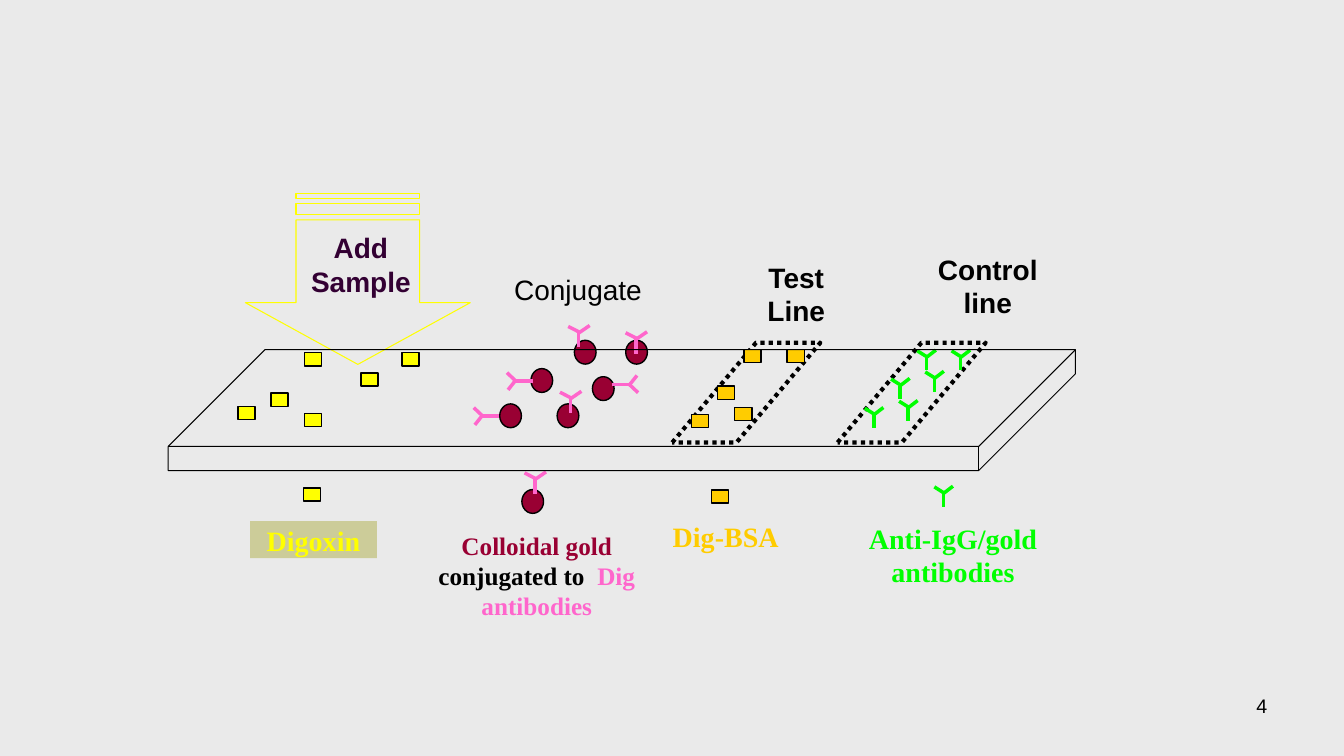
"""Build the slide of a lateral flow test strip for digoxin."""
from lxml import etree
from pptx import Presentation
from pptx.dml.color import RGBColor
from pptx.enum import dml, shapes, text
from pptx.oxml import ns
from pptx.util import Pt

BLACK, YELLOW, ORANGE = "000000", "FFFF00", "FFCC00"
GREEN, PINK, WINE, PLUM = "00FF00", "FF66CC", "990033", "330033"
SANS, SERIF = "Arial", "Times New Roman"
MID = text.PP_ALIGN.CENTER
LEFT = text.PP_ALIGN.LEFT
RIGHT = text.PP_ALIGN.RIGHT
TIGHT, WIDE = (2.9, 1.45), (7.2, 3.6)

LABELS = [
    ((203.8, 163.4, 108, 54.7), [[("Add Sample", PLUM)]], SANS, 20, True, MID, TIGHT, None),
    ((364.3, 193, 135.4, 30), [[("Conjugate", BLACK)]], SANS, 20, False, LEFT, TIGHT, None),
    ((654.5, 178.6, 102.2, 54.7), [[("Control", BLACK)], [("line", BLACK)]],
     SANS, 20, True, MID, TIGHT, None),
    ((532.8, 184.3, 72, 54.7), [[("Test", BLACK)], [("Line", BLACK)]],
     SANS, 20, True, MID, TIGHT, None),
    ((178.6, 372.2, 90.6, 26.6), [[("Digoxin", YELLOW)]],
     SERIF, 20, True, MID, TIGHT, "CCCC99"),
    ((608.4, 370.8, 144.7, 46.8), [[("Anti-IgG/gold", GREEN)], [("antibodies", GREEN)]],
     SERIF, 20, True, MID, TIGHT, None),
    ((453.6, 369.4, 129.6, 26.6), [[("Dig-BSA", ORANGE)]], SERIF, 20, True, MID, TIGHT, None),
    ((298.8, 377.3, 169.2, 67),
     [[("Colloidal gold", WINE)], [("conjugated to", BLACK), ("  Dig antibodies", PINK)]],
     SERIF, 18, True, MID, TIGHT, None),
    ((688.3, 491.8, 223.9, 37.4), [[("4", BLACK)]], SANS, 14, False, RIGHT, WIDE, None),
]

CHIP, BALL = (12.2, 9.4), (15.5, 17)
CHIPS = {
    YELLOW: [(217.4, 252), (287.3, 252), (217.4, 295.2), (216.7, 348.5),
             (169.9, 290.2), (193.7, 280.8), (257.8, 266.4)],
    ORANGE: [(508.3, 349.9), (524.9, 290.9), (562.3, 249.8), (493.9, 295.9),
             (512.6, 275.8), (531.4, 249.8)],
}
BALLS = [(418, 251.6), (454.7, 251.6), (380.5, 358.2), (405.7, 297),
         (387, 271.8), (364.7, 297), (430.9, 277.6)]

SMALL = [(0, 0, 0, 9), (-0.4, 0, 6.8, -5.5), (-6.5, -5, 0.7, -0.5)]
UP = [(0, 0, 0, 10.7), (0.7, 0, -7.5, -4.2), (7.8, -4.9, -0.2, 0.6)]
WEST = [(0, 0, 12.5, 0), (0, 0, -5, 6.3), (-5.8, -6, 1, 0.4)]
EAST = [tuple(-n for n in arm) for arm in WEST]
BODIES = [
    (GREEN, SMALL, [(643, 275.8), (624.2, 296.6), (661.7, 255.6), (686.2, 255.6),
                    (667.4, 270.7), (648.7, 291.6), (673.9, 352.8)]),
    (PINK, UP, [(407.5, 284.4), (382.2, 342), (454.4, 241.9), (413.4, 237.4)]),
    (PINK, WEST, [(344.2, 297.2), (367.9, 272.2)]),
    (PINK, EAST, [(450, 274.5)]),
]
BANDS = [(480.2, 244.8, 105.8, 71.3), (598.3, 244.8, 105.8, 71.3)]
ARROW = (194.4, 118.8, 122.4, 160.6)
STRIP = (120.2, 249.8, 648, 86.4)


def tint(code):
    return RGBColor.from_string(code)


def fmt(obj, **vals):
    for key, val in vals.items():
        setattr(obj, key, val)


def ink(line, code, width):
    line.color.rgb = tint(code)
    line.width = Pt(width)


def draw(slide, kind, box, line, width, fill=None, adj=()):
    shape = slide.shapes.add_shape(kind, *map(Pt, box))
    shape.shadow.inherit = False
    ink(shape.line, line, width)
    if fill:
        shape.fill.solid()
        shape.fill.fore_color.rgb = tint(fill)
    else:
        shape.fill.background()
    for i, val in enumerate(adj):
        shape.adjustments[i] = val
    return shape


def body(slide, code, arms, x, y):
    for x1, y1, x2, y2 in arms:
        ends = map(Pt, (x + x1, y + y1, x + x2, y + y2))
        line = slide.shapes.add_connector(shapes.MSO_CONNECTOR.STRAIGHT, *ends)
        ink(line.line, code, 2.5)
        etree.SubElement(line._element.spPr, ns.qn("a:effectLst"))


def label(slide, box, paras, face, size, bold, align, pad, fill):
    area = slide.shapes.add_textbox(*map(Pt, box))
    if fill:
        area.fill.solid()
        area.fill.fore_color.rgb = tint(fill)
    frame = area.text_frame
    side, top = map(Pt, pad)
    fmt(frame, word_wrap=True, margin_left=side, margin_right=side,
        margin_top=top, margin_bottom=top)
    for i, runs in enumerate(paras):
        para = frame.add_paragraph() if i else frame.paragraphs[0]
        para.alignment = align
        for words, code in runs:
            run = para.add_run()
            run.text = words
            fmt(run.font, name=face, size=Pt(size), bold=bold)
            run.font.color.rgb = tint(code)


def main():
    deck = Presentation()
    fmt(deck, slide_width=Pt(960), slide_height=Pt(540))
    slide = deck.slides.add_slide(deck.slide_layouts[6])
    slide.background.fill.solid()
    slide.background.fill.fore_color.rgb = tint("EAEAEA")
    kind = shapes.MSO_SHAPE

    for box in BANDS:
        band = draw(slide, kind.PARALLELOGRAM, box, BLACK, 3, adj=[0.84])
        band.line.dash_style = dml.MSO_LINE.ROUND_DOT
    for code, spots in CHIPS.items():
        for spot in spots:
            draw(slide, kind.RECTANGLE, spot + CHIP, BLACK, 1, code)
    wide, high = BALL
    for x, y in BALLS:
        draw(slide, kind.OVAL, (x - wide / 2, y - high / 2, wide, high), BLACK, 1, WINE)
    for code, arms, spots in BODIES:
        for x, y in spots:
            body(slide, code, arms, x, y)
    arrow = draw(slide, kind.STRIPED_RIGHT_ARROW, ARROW, YELLOW, 0.75, adj=[0.55, 0.36])
    arrow.rotation = 90
    draw(slide, kind.CUBE, STRIP, BLACK, 0.75, adj=[0.8])
    for item in LABELS:
        label(slide, *item)
    deck.save("out.pptx")


if __name__ == "__main__":
    main()
